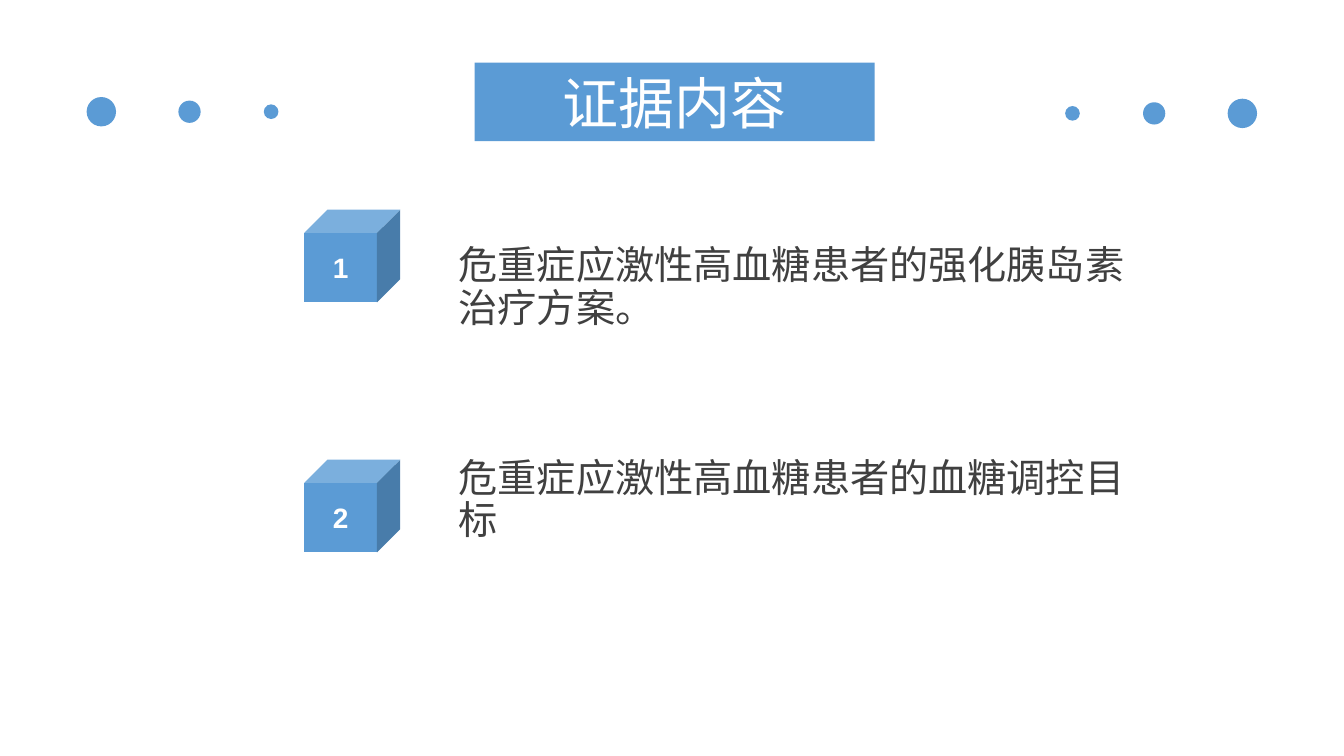
from lxml.etree import SubElement
from pptx import Presentation
from pptx.dml.color import RGBColor
from pptx.enum.shapes import MSO_SHAPE as Preset
from pptx.enum.text import MSO_ANCHOR as Anchor, MSO_AUTO_SIZE as AutoSize, PP_ALIGN as Align
from pptx.oxml.ns import qn
from pptx.util import Inches, Pt

COLORS = {"accent": "5B9BD5", "text": "404040", "light": "FFFFFF"}
COLUMNS, ROWS = 160, 90
DOTS = [(0, 3.5), (10.5, 2.65), (20.22, 1.75)]
ITEMS = [
    ("危重症应激性高血糖患者的强化胰岛素治疗方案。", 24.96, (54.6, 26.88, 82.92, 14.88)),
    ("危重症应激性高血糖患者的血糖调控目标", 54.72, (54.6, 53.52, 80.76, 12.24)),
]


class SlideBuilder:
    font = "Arial"

    def __init__(self, deck):
        self.column = deck.slide_width / COLUMNS
        self.row = deck.slide_height / ROWS
        self.page = deck.slides.add_slide(deck.slide_layouts.get_by_name("Two Content"))

    def area(self, left, top, width, height):
        return (int(left * self.column), int(top * self.row),
                int(width * self.column), int(height * self.row))

    def place(self, box, area):
        box.left, box.top, box.width, box.height = self.area(*area)

    def paint(self, box):
        box.fill.solid()
        box.fill.fore_color.rgb = RGBColor.from_string(COLORS["accent"])
        box.line.fill.background()

    def set_text(self, box, text, size, color, align, bold=False, side=0.1, edge=0.0):
        frame = box.text_frame
        frame.text = text
        frame.word_wrap = True
        frame.auto_size = AutoSize.NONE
        frame.vertical_anchor = Anchor.MIDDLE
        frame.margin_left = frame.margin_right = Inches(side)
        frame.margin_top = frame.margin_bottom = Inches(edge)
        para = frame.paragraphs[0]
        para.alignment = align
        para.font.name = self.font
        para.font.size = Pt(size)
        para.font.bold = bold
        para.font.color.rgb = RGBColor.from_string(COLORS[color])
        return para

    def shape(self, preset, area):
        box = self.page.shapes.add_shape(preset, *self.area(*area))
        box.shadow.inherit = False
        self.paint(box)
        return box

    def title(self, text, area):
        box = self.page.shapes.title
        self.place(box, area)
        outline = SubElement(box.element.spPr, qn("a:prstGeom"), prst="roundRect")
        guides = SubElement(outline, qn("a:avLst"))
        SubElement(guides, qn("a:gd"), name="adj", fmla="val 50000")
        self.paint(box)
        self.set_text(box, text, 40, "light", Align.CENTER)

    def dots(self, start, direction, middle):
        for offset, size in DOTS:
            center = start + direction * offset
            self.shape(Preset.OVAL, (center - size / 2, middle - size / 2, size, size))

    def cube(self, number, top):
        box = self.shape(Preset.CUBE, (36.24, top, 11.4, 11.04))
        self.set_text(box, str(number), 20, "light", Align.CENTER, bold=True, edge=0.05)

    def body(self, index, text, area):
        box = self.page.placeholders[index]
        self.place(box, area)
        para = self.set_text(box, text, 28, "text", Align.LEFT, side=0)
        para.line_spacing = 0.9
        para.space_before = Pt(0)
        properties = para._p.get_or_add_pPr()
        properties.set("marL", "0")
        properties.set("indent", "0")
        bullet = SubElement(properties, qn("a:buNone"))
        properties.find(qn("a:defRPr")).addprevious(bullet)


def main():
    deck = Presentation()
    deck.slide_width, deck.slide_height = Inches(13.33), Inches(7.5)
    slide = SlideBuilder(deck)
    slide.dots(147.9, -1, 13.5)
    slide.dots(12.06, 1, 13.3)
    slide.title("证据内容", (56.5, 7.44, 47.64, 9.36))
    for number, (text, cube_top, area) in enumerate(ITEMS, 1):
        slide.cube(number, cube_top)
        slide.body(number, text, area)
    deck.save("out.pptx")


if __name__ == "__main__":
    main()
